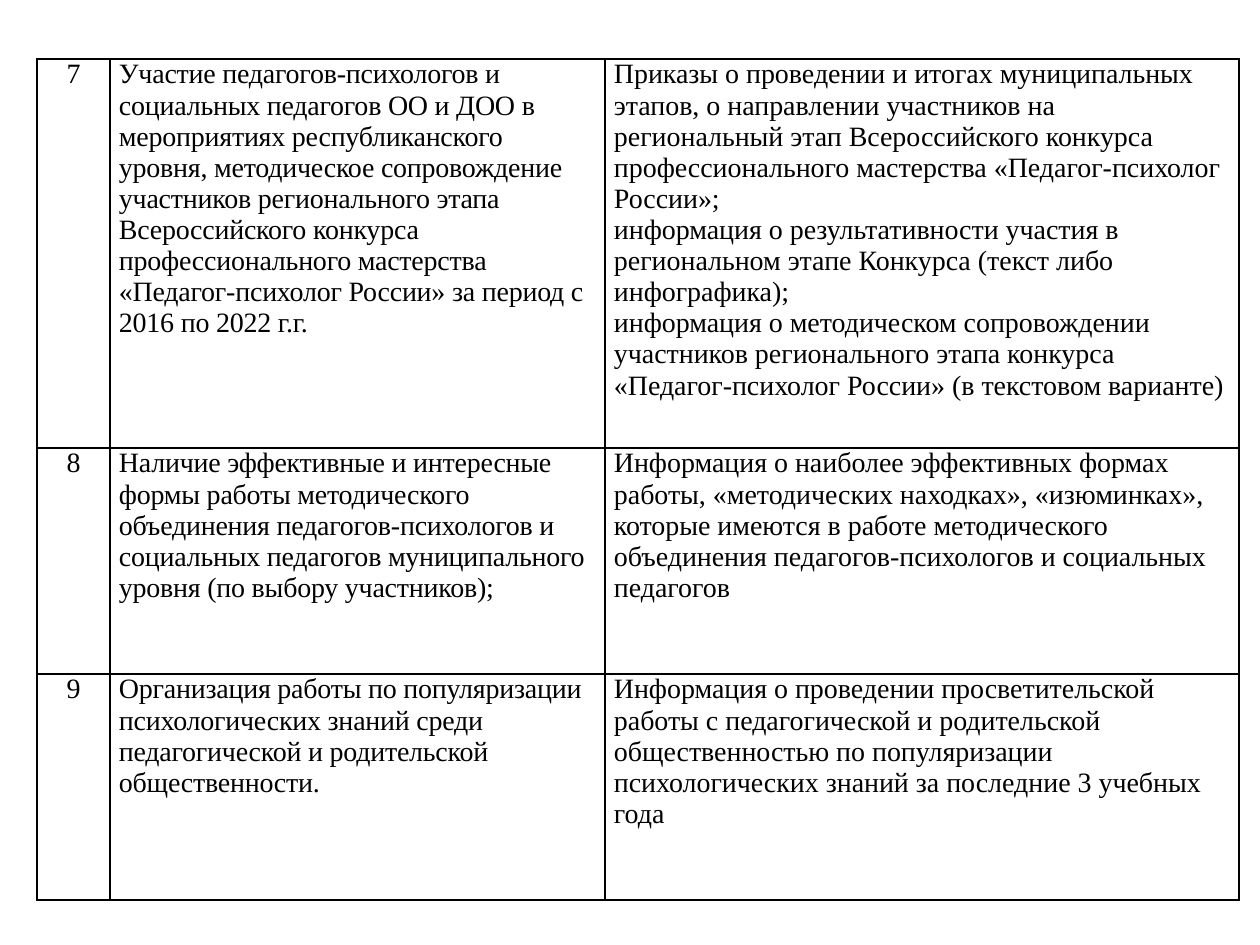
from dataclasses import dataclass

from lxml.etree import SubElement
from pptx import Presentation
from pptx.dml.color import RGBColor
from pptx.enum.text import MSO_ANCHOR as Anchor, PP_ALIGN as Align
from pptx.oxml.ns import qn
from pptx.table import Table, _Cell as Cell
from pptx.util import Emu, Pt

PX_PER_INCH = 126


@dataclass(frozen=True)
class Theme:
    font: str = "Times New Roman"
    size: int = 16
    ink: str = "000000"
    border: int = 1


@dataclass(frozen=True)
class Criterion:
    number: str
    activity: str
    evidence: tuple[str, ...]
    height: int


@dataclass(frozen=True)
class Column:
    width: int
    align: Align = Align.LEFT
    spacing: int = 0


THEME = Theme()
LEFT, TOP = 37, 59
COLUMNS = (Column(73, Align.CENTER), Column(495, spacing=-10), Column(634))
CRITERIA = (
    Criterion(
        "7",
        "Участие педагогов-психологов и социальных педагогов ОО и ДОО в мероприятиях "
        "республиканского уровня, методическое сопровождение участников регионального этапа "
        "Всероссийского конкурса профессионального мастерства «Педагог-психолог России» "
        "за период с 2016 по 2022 г.г.",
        (
            "Приказы о проведении и итогах муниципальных этапов, о направлении участников на "
            "региональный этап Всероссийского конкурса профессионального мастерства "
            "«Педагог-психолог России»;",
            "информация о результативности участия в региональном этапе Конкурса "
            "(текст либо инфографика);",
            "информация о методическом сопровождении участников регионального этапа конкурса "
            "«Педагог-психолог России» (в текстовом варианте)",
        ),
        389,
    ),
    Criterion(
        "8",
        "Наличие эффективные и интересные формы работы методического объединения "
        "педагогов-психологов и социальных педагогов муниципального уровня "
        "(по выбору участников);",
        (
            "Информация о наиболее эффективных формах работы, «методических находках», "
            "«изюминках», которые имеются в работе методического объединения "
            "педагогов-психологов и социальных педагогов",
        ),
        226,
    ),
    Criterion(
        "9",
        "Организация работы по популяризации психологических знаний среди "
        "педагогической и родительской общественности.",
        (
            "Информация о проведении просветительской работы с педагогической и родительской "
            "общественностью по популяризации психологических знаний за последние "
            "3 учебных года",
        ),
        226,
    ),
)


def px(length: int) -> Emu:
    return Emu(round(length * 914400 / PX_PER_INCH))


def apply_format(target: object, values: dict) -> None:
    for name, value in values.items():
        setattr(target, name, value)


def draw_borders(cell: Cell) -> None:
    properties = cell._tc.get_or_add_tcPr()
    for side in ("lnL", "lnR", "lnT", "lnB"):
        line = SubElement(properties, qn(f"a:{side}"), w=str(Pt(THEME.border)))
        fill = SubElement(line, qn("a:solidFill"))
        SubElement(fill, qn("a:srgbClr"), val=THEME.ink)


def write_cell(cell: Cell, texts: tuple[str, ...], column: Column) -> None:
    apply_format(cell, {
        "margin_left": px(9), "margin_right": px(9),
        "margin_top": 0, "margin_bottom": 0,
        "vertical_anchor": Anchor.TOP,
    })
    draw_borders(cell)
    cell.fill.background()
    cell.text_frame.text = "\n".join(texts)
    for paragraph in cell.text_frame.paragraphs:
        paragraph.alignment = column.align
        for run in paragraph.runs:
            apply_format(run.font, {"name": THEME.font, "size": Pt(THEME.size)})
            run.font.color.rgb = RGBColor.from_string(THEME.ink)
            run._r.get_or_add_rPr().set("spc", str(column.spacing))


def fill_table(table: Table) -> None:
    apply_format(table, {"first_row": False, "horz_banding": False})
    for index, column in enumerate(COLUMNS):
        table.columns[index].width = px(column.width)
    for row, criterion in zip(table.rows, CRITERIA):
        row.height = px(criterion.height)
        contents = ((criterion.number,), (criterion.activity,), criterion.evidence)
        for cell, texts, column in zip(row.cells, contents, COLUMNS):
            write_cell(cell, texts, column)


def main() -> None:
    presentation = Presentation()
    apply_format(presentation, {"slide_width": px(1260), "slide_height": px(945)})
    slide = presentation.slides.add_slide(presentation.slide_layouts[6])
    width = sum(column.width for column in COLUMNS)
    height = sum(criterion.height for criterion in CRITERIA)
    frame = slide.shapes.add_table(
        len(CRITERIA), len(COLUMNS), px(LEFT), px(TOP), px(width), px(height)
    )
    fill_table(frame.table)
    presentation.save("out.pptx")


if __name__ == "__main__":
    main()
